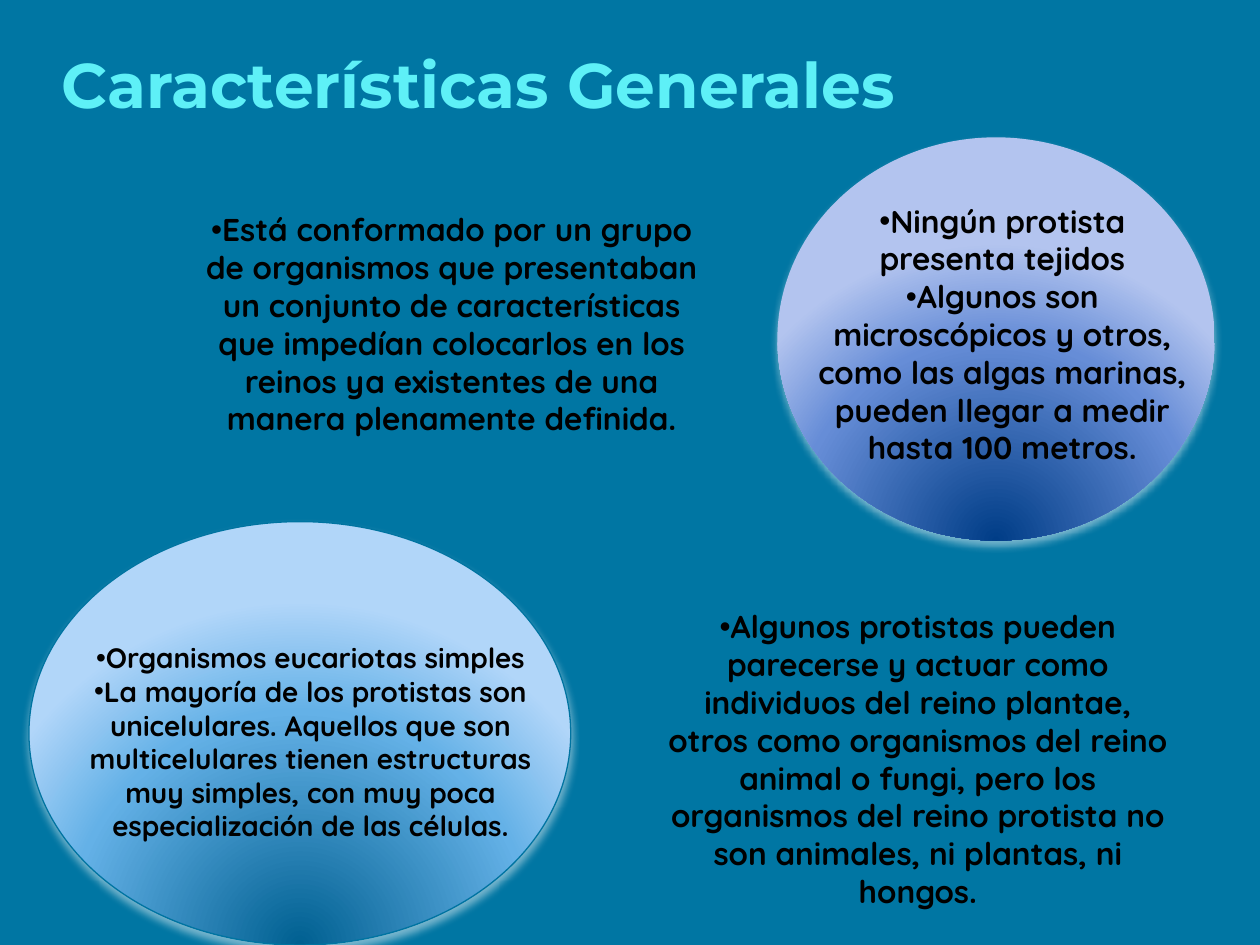
from dataclasses import dataclass

from lxml.etree import SubElement
from pptx import Presentation
from pptx.dml.color import RGBColor
from pptx.enum.shapes import MSO_SHAPE
from pptx.enum.text import MSO_ANCHOR, MSO_AUTO_SIZE, PP_ALIGN
from pptx.oxml import parse_xml
from pptx.oxml.ns import nsdecls, qn
from pptx.util import Inches, Pt


@dataclass(frozen=True)
class Theme:
    """Colours, fonts and type sizes of the slide."""
    background: str = "0076A3"
    title: str = "5EF0F7"
    text: str = "000000"
    shadow: str = "FFFFFF"
    rim: str = "0074A1"
    violet: tuple = ("003D87", "668DD7", "B3C4EF")
    sky: tuple = ("006091", "64B1E7", "B1D6F9")
    title_font: str = "Montserrat"
    body_font: str = "Quicksand"
    title_size: int = 36
    body_size: int = 18
    small_size: int = 16


THEME = Theme()


def place(sp, box):
    """Move a shape to a box of left, top, width and height in inches."""
    sp.left, sp.top, sp.width, sp.height = map(Inches, box)


def set_font(p, name, size, color):
    """Give a paragraph its bold font."""
    p.font.name = name
    p.font.size = Pt(size)
    p.font.bold = True
    p.font.color.rgb = RGBColor.from_string(color)


def open_frame(sp, box):
    """Place a placeholder and return its top-anchored text frame."""
    place(sp, box)
    tf = sp.text_frame
    tf.word_wrap = True
    tf.auto_size = MSO_AUTO_SIZE.SHAPE_TO_FIT_TEXT
    tf.vertical_anchor = MSO_ANCHOR.TOP
    return tf


def fill_title(sp, box, text):
    """Write the slide title."""
    tf = open_frame(sp, box)
    tf.text = text
    p = tf.paragraphs[0]
    p.alignment = PP_ALIGN.LEFT
    set_font(p, THEME.title_font, THEME.title_size, THEME.title)


def fill_list(sp, box, items, size=THEME.body_size, first_spacing=1.0):
    """Write a centred bulleted list."""
    tf = open_frame(sp, box)
    tf.text = "\n".join(items)
    for i, p in enumerate(tf.paragraphs):
        p.alignment = PP_ALIGN.CENTER
        p.space_before = Pt(0)
        p.line_spacing = 1.0 if i else first_spacing
        set_font(p, THEME.body_font, size, THEME.text)
        pPr = p._p.get_or_add_pPr()
        pPr.set("marL", "0")
        pPr.set("indent", "0")
        bullet_font = parse_xml(f'<a:buFont {nsdecls("a")} typeface="Arial"/>')
        bullet = parse_xml(f'<a:buChar {nsdecls("a")} char="•"/>')
        pPr.find(qn("a:defRPr")).addprevious(bullet_font)
        bullet_font.addnext(bullet)


def add_bubble(s, box, colors, rim=None):
    """Add a glowing ellipse behind the text."""
    sp = s.shapes.add_shape(MSO_SHAPE.OVAL, *map(Inches, box))
    s.shapes._spTree.insert(2, sp._element)
    sp.fill.background()
    if rim:
        sp.line.color.rgb = RGBColor.from_string(rim)
        sp.line.width = Pt(0.75)
    else:
        sp.line.fill.background()
    stops = "".join(
        f'<a:gs pos="{pos * 1000}"><a:srgbClr val="{color}"/></a:gs>'
        for pos, color in zip((0, 68, 100), colors))
    spPr = sp._element.spPr
    spPr.replace(spPr.find(qn("a:noFill")), parse_xml(
        f'<a:gradFill {nsdecls("a")}><a:gsLst>{stops}</a:gsLst>'
        '<a:path path="circle"><a:fillToRect l="50000" t="130000"'
        ' r="50000" b="-30000"/></a:path></a:gradFill>'))
    sp.shadow.inherit = False
    shadow = SubElement(
        spPr.find(qn("a:effectLst")), qn("a:outerShdw"),
        blurRad=str(Pt(4.5)), dist=str(Pt(3)), dir="5400000",
        algn="ctr", rotWithShape="0")
    color = SubElement(shadow, qn("a:srgbClr"), val=THEME.shadow)
    SubElement(color, qn("a:alpha"), val="48000")


def build_slide(prs):
    """Build the slide of general characteristics."""
    s = prs.slides.add_slide(prs.slide_layouts.get_by_name("Comparison"))
    s.background.fill.solid()
    s.background.fill.fore_color.rgb = RGBColor.from_string(THEME.background)
    title, origin, tissues, cells, kingdoms = list(s.placeholders)[:5]
    fill_title(title, (0.39, 0.31, 8.2, 0.71), "Características Generales")
    fill_list(origin, (1.46, 1.62, 4.25, 1.92), [
        "Está conformado por un grupo de organismos que presentaban un "
        "conjunto de características que impedían colocarlos en los reinos "
        "ya existentes de una manera plenamente definida."])
    fill_list(tissues, (6.34, 1.55, 3.23, 2.52), [
        "Ningún protista presenta tejidos",
        "Algunos son microscópicos y otros, como las algas marinas, pueden "
        "llegar a medir hasta 100 metros."])
    fill_list(cells, (0.59, 4.77, 3.75, 1.99), [
        "Organismos eucariotas simples",
        "La mayoría de los protistas son unicelulares. Aquellos que son "
        "multicelulares tienen estructuras muy simples, con muy poca "
        "especialización de las células."], THEME.small_size, 2.0)
    fill_list(kingdoms, (5.16, 4.77, 4.25, 2.52), [
        "Algunos protistas pueden parecerse y actuar como individuos del "
        "reino plantae, otros como organismos del reino animal o fungi, pero "
        "los organismos del reino protista no son animales, ni plantas, ni "
        "hongos."])
    add_bubble(s, (6.17, 1.09, 3.47, 3.2), THEME.violet)
    add_bubble(s, (0.23, 4.14, 4.3, 3.36), THEME.sky, THEME.rim)


def main():
    """Create and save the presentation."""
    prs = Presentation()
    prs.slide_width, prs.slide_height = Inches(10), Inches(7.5)
    build_slide(prs)
    prs.save("out.pptx")


if __name__ == "__main__":
    main()
